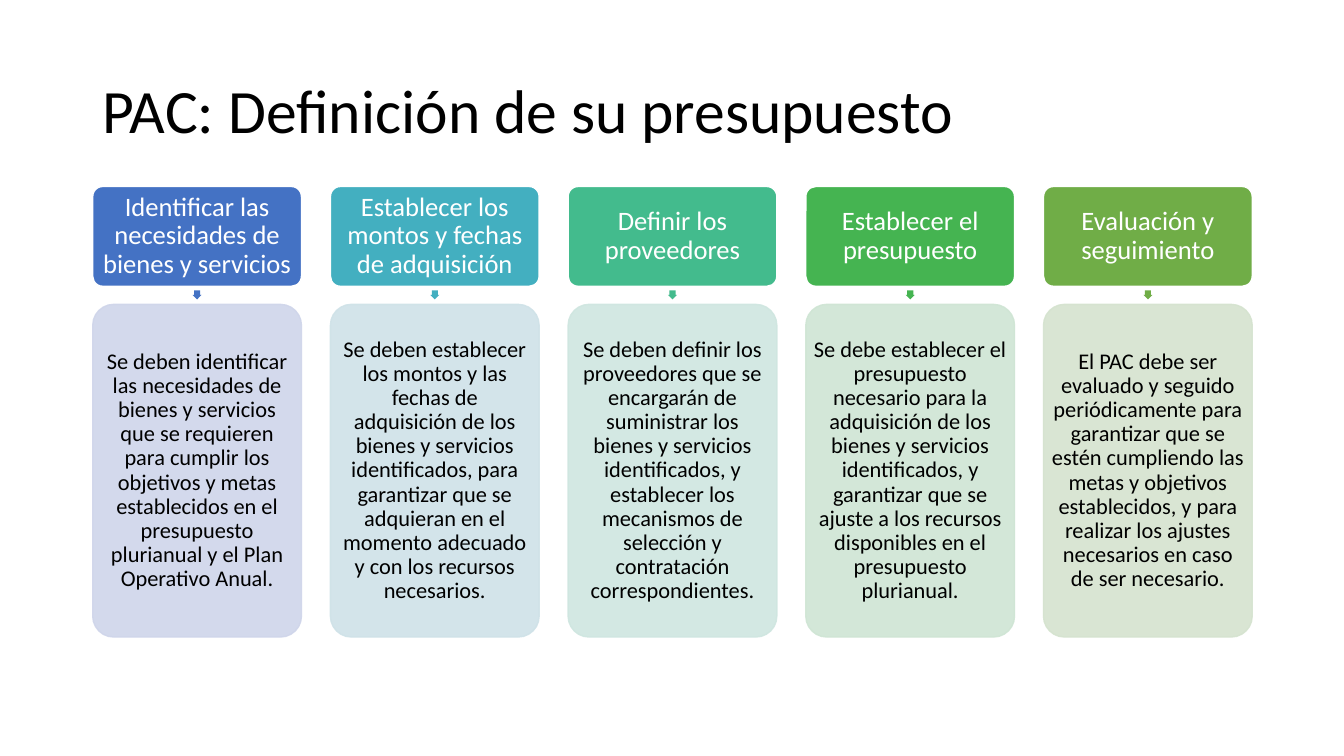
from dataclasses import dataclass

from lxml import etree
from pptx import Presentation
from pptx.dml.color import RGBColor
from pptx.enum.shapes import MSO_SHAPE as Shape
from pptx.enum.text import MSO_ANCHOR as Anchor, PP_ALIGN as Align
from pptx.oxml.ns import qn
from pptx.util import Inches, Pt

TITLE = "PAC: Definición de su presupuesto"

# heading, description, strong colour, pale colour
STEPS = [
    ("Identificar las necesidades de bienes y servicios",
     "Se deben identificar las necesidades de bienes y servicios que se requieren "
     "para cumplir los objetivos y metas establecidos en el presupuesto plurianual "
     "y el Plan Operativo Anual.",
     "4472C4", "CFD5EA"),
    ("Establecer los montos y fechas de adquisición",
     "Se deben establecer los montos y las fechas de adquisición de los bienes y "
     "servicios identificados, para garantizar que se adquieran en el momento "
     "adecuado y con los recursos necesarios.",
     "43AFC0", "CFE2E8"),
    ("Definir los proveedores",
     "Se deben definir los proveedores que se encargarán de suministrar los bienes "
     "y servicios identificados, y establecer los mecanismos de selección y "
     "contratación correspondientes.",
     "43BB8D", "CFE6E0"),
    ("Establecer el presupuesto",
     "Se debe establecer el presupuesto necesario para la adquisición de los bienes "
     "y servicios identificados, y garantizar que se ajuste a los recursos "
     "disponibles en el presupuesto plurianual.",
     "45B451", "CFE5D4"),
    ("Evaluación y seguimiento",
     "El PAC debe ser evaluado y seguido periódicamente para garantizar que se estén "
     "cumpliendo las metas y objetivos establecidos, y para realizar los ajustes "
     "necesarios en caso de ser necesario.",
     "70AD47", "D5E3CF"),
]


@dataclass(frozen=True)
class Theme:
    font: str = "Calibri"
    dark: str = "000000"
    light: str = "FFFFFF"
    title_size: int = 44
    heading_size: int = 19
    body_size: int = 16
    pale_opacity: int = 90


THEME = Theme()

# Layout in inches
LEFT, RIGHT = 0.92, 12.42
CARD_WIDTH = 2.07
PITCH = (RIGHT - LEFT - CARD_WIDTH) / (len(STEPS) - 1)
HEADING_TOP, HEADING_HEIGHT = 1.85, 0.99
BODY_TOP, BODY_HEIGHT = 3.02, 3.3
ARROW_TOP, ARROW_SIZE = 2.88, 0.09


def write(shape, text, size, color, align, inset=None):
    frame = shape.text_frame
    frame.text = text
    frame.word_wrap = True
    frame.vertical_anchor = Anchor.MIDDLE
    if inset is not None:
        frame.margin_left = frame.margin_right = Inches(inset)
        frame.margin_top = frame.margin_bottom = Inches(inset)
    paragraph = frame.paragraphs[0]
    paragraph.alignment = align
    paragraph.line_spacing = 0.9
    font = paragraph.font
    font.name, font.size = THEME.font, Pt(size)
    font.color.rgb = RGBColor.from_string(color)


def add_filled(slide, kind, box, fill, line=None):
    shape = slide.shapes.add_shape(kind, *map(Inches, box))
    shape.shadow.inherit = False
    shape.fill.solid()
    shape.fill.fore_color.rgb = RGBColor.from_string(fill)
    if line is None:
        shape.line.fill.background()
    else:
        shape.line.color.rgb = RGBColor.from_string(line)
        shape.line.width = Pt(1)
    return shape


def set_opacity(shape, percent):
    for color in shape.element.spPr.iter(qn("a:srgbClr")):
        etree.SubElement(color, qn("a:alpha")).set("val", str(percent * 1000))


def add_step(slide, left, heading, description, strong, pale):
    # Heading card
    header = add_filled(slide, Shape.ROUNDED_RECTANGLE,
                        (left, HEADING_TOP, CARD_WIDTH, HEADING_HEIGHT), strong, THEME.light)
    header.adjustments[0] = 0.1
    write(header, heading, THEME.heading_size, THEME.light, Align.CENTER, 0.03)

    # Arrow pointing down
    arrow_left = left + (CARD_WIDTH - ARROW_SIZE) / 2
    arrow = add_filled(slide, Shape.RIGHT_ARROW,
                       (arrow_left, ARROW_TOP, ARROW_SIZE, ARROW_SIZE), strong)
    arrow.rotation = 90
    arrow.adjustments[0] = 0.67

    # Description card
    body = add_filled(slide, Shape.ROUNDED_RECTANGLE,
                      (left, BODY_TOP, CARD_WIDTH, BODY_HEIGHT), pale, pale)
    body.adjustments[0] = 0.1
    set_opacity(body, THEME.pale_opacity)
    write(body, description, THEME.body_size, THEME.dark, Align.CENTER, 0.02)


def main():
    presentation = Presentation()
    presentation.slide_width, presentation.slide_height = Inches(13.33), Inches(7.5)
    slide = presentation.slides.add_slide(presentation.slide_layouts[6])

    # Title
    title = slide.shapes.add_textbox(*map(Inches, (LEFT, 0.4, RIGHT - LEFT, 1.45)))
    write(title, TITLE, THEME.title_size, THEME.dark, Align.LEFT)

    # Steps
    for index, step in enumerate(STEPS):
        add_step(slide, LEFT + index * PITCH, *step)

    presentation.save("out.pptx")


if __name__ == "__main__":
    main()
